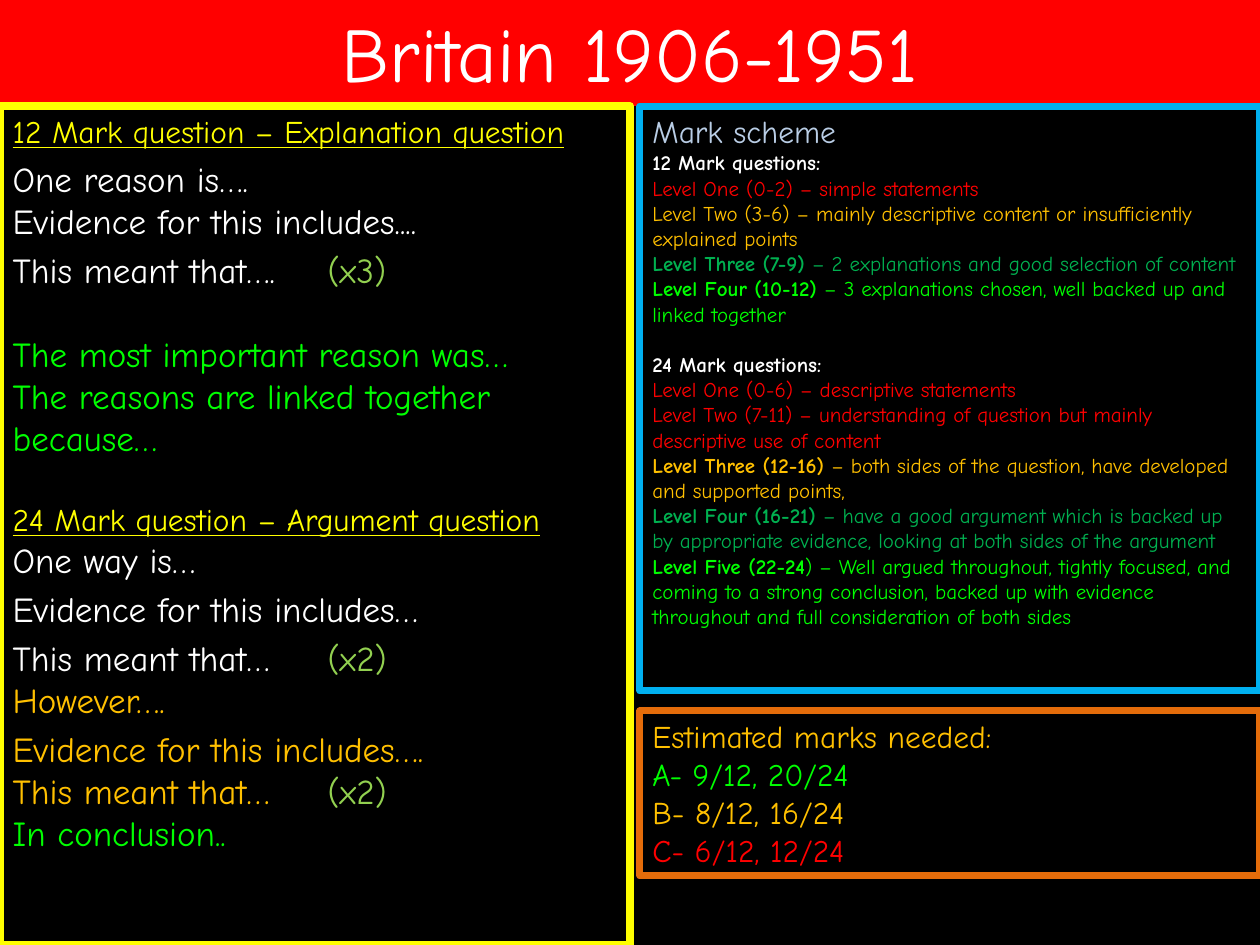
from lxml import etree
from pptx import Presentation
from pptx import util as u
from pptx.dml.color import RGBColor
from pptx.enum import text
from pptx.oxml.ns import qn

PX = 914400 / 126
COLOURS = {
    "black": "000000", "white": "FFFFFF", "red": "FF0000", "yellow": "FFFF00",
    "lime": "00FF00", "green": "00B050", "olive": "92D050", "amber": "FFC000",
    "sky": "00B0F0", "orange": "E46C0A", "pale": "B9CDE5",
}


def px(length):
    return u.Emu(round(length * PX))


def colour(name):
    return RGBColor.from_string(COLOURS[name])


def add_span(para, words, ink="white", size=20, bold=False, underline=False):
    span = para.add_run()
    span.text = words
    font = span.font
    font.name = "Comic Neue"
    font.size = u.Pt(size)
    font.bold = bold
    font.underline = underline
    font.color.rgb = colour(ink)


def line(*spans, before=0, tab=None, **style):
    """Describe one paragraph; each span is (words, ink) or (words, ink, bold)."""
    return {"spans": spans, "before": before, "tab": tab, "style": style}


class SlideBuilder:
    def __init__(self, deck):
        self.page = deck.slides.add_slide(deck.slide_layouts[0])
        self.page.background.fill.solid()
        self.page.background.fill.fore_color.rgb = colour("black")

    def dress(self, box, area, fill=None, border=None, width=4):
        box.left, box.top, box.width, box.height = map(px, area)
        if fill:
            box.fill.solid()
            box.fill.fore_color.rgb = colour(fill)
        if border:
            box.line.color.rgb = colour(border)
            box.line.width = u.Pt(width)

    def fill_text(self, box, lines, align=text.PP_ALIGN.LEFT, anchor=text.MSO_ANCHOR.TOP):
        frame = box.text_frame
        frame.word_wrap = True
        frame.auto_size = text.MSO_AUTO_SIZE.NONE
        frame.vertical_anchor = anchor
        for index, item in enumerate(lines):
            para = frame.add_paragraph() if index else frame.paragraphs[0]
            para.alignment = align
            para.space_before = u.Pt(item["before"])
            if item["tab"]:
                stops = etree.SubElement(para._p.get_or_add_pPr(), qn("a:tabLst"))
                etree.SubElement(stops, qn("a:tab"), pos=str(px(item["tab"])), algn="l")
            for words, ink, *bold in item["spans"]:
                add_span(para, words, ink, bold=any(bold), **item["style"])

    def title(self, words, area):
        box = self.page.shapes.title
        self.dress(box, area, fill="red")
        self.fill_text(box, [line((words, "white"), size=44)],
                       text.PP_ALIGN.CENTER, text.MSO_ANCHOR.MIDDLE)

    def body(self, lines, area, border):
        box = self.page.placeholders[1]
        self.dress(box, area, "black", border, 4.25)
        self.fill_text(box, lines)

    def panel(self, lines, area, border, fill=None):
        box = self.page.shapes.add_textbox(0, 0, 0, 0)
        self.dress(box, area, fill, border)
        self.fill_text(box, lines)


def heading(words, before):
    return line((words, "yellow"), before=before, size=18, underline=True)


def level(name, detail, ink, bold=True):
    return line((name, ink, bold), (detail, ink), size=12)


def main():
    deck = Presentation()
    deck.slide_width, deck.slide_height = px(1260), px(945)
    builder = SlideBuilder(deck)

    builder.title("Britain 1906-1951", (0, -2, 1260, 108))

    # Sentence starters for both question types
    gap, step = 24, 4
    builder.body([
        heading("12 Mark question – Explanation question", step),
        line(("One reason is….", "white"), before=step),
        line(("Evidence for this includes....", "white")),
        line(("This meant that….\t", "white"), ("(x3)", "olive"), before=step, tab=474),
        line(("The most important reason was…", "lime"), before=gap),
        line(("The reasons are linked together because…", "lime")),
        heading("24 Mark question – Argument question", gap),
        line(("One way is…", "white")),
        line(("Evidence for this includes…", "white"), before=step),
        line(("This meant that…\t", "white"), ("(x2)", "olive"), before=step, tab=492),
        line(("However….", "amber")),
        line(("Evidence for this includes….", "amber"), before=step),
        line(("This meant that…\t", "amber"), ("(x2)", "olive"), tab=503),
        line(("In conclusion..", "lime")),
    ], (0, 106, 630, 839), "yellow")

    # Mark scheme
    builder.panel([
        line(("Mark scheme", "pale"), size=18),
        line(("12 Mark questions:", "white", True), size=12),
        level("Level One (0-2)", " – simple statements", "red", False),
        level("Level Two (3-6)", " – mainly descriptive content or insufficiently "
              "explained points", "amber", False),
        level("Level Three (7-9)", " – 2 explanations and good selection of content", "green"),
        level("Level Four (10-12)", " – 3 explanations chosen, well backed up and "
              "linked together", "lime"),
        line(("24 Mark questions:", "white", True), before=14.4, size=12),
        level("Level One (0-6)", " – descriptive statements", "red", False),
        level("Level Two (7-11)", " – understanding of question but mainly "
              "descriptive use of content", "red", False),
        level("Level Three (12-16)", " – both sides of the question, have developed "
              "and supported points,", "amber"),
        level("Level Four (16-21)", " – have a good argument which is backed up by "
              "appropriate evidence, looking at both sides of the argument", "green"),
        level("Level Five (22-24", ") – Well argued throughout, tightly focused, and "
              "coming to a strong conclusion, backed up with evidence throughout and "
              "full consideration of both sides", "lime"),
    ], (640, 106, 620, 585), "sky")

    # Grade targets
    targets = [("Estimated marks needed:", "amber"), ("A- 9/12, 20/24", "lime"),
               ("B- 8/12, 16/24", "amber"), ("C- 6/12, 12/24", "red")]
    builder.panel([line(target, size=18) for target in targets],
                  (640, 711, 620, 165), "orange", "black")

    deck.save("out.pptx")


if __name__ == "__main__":
    main()
